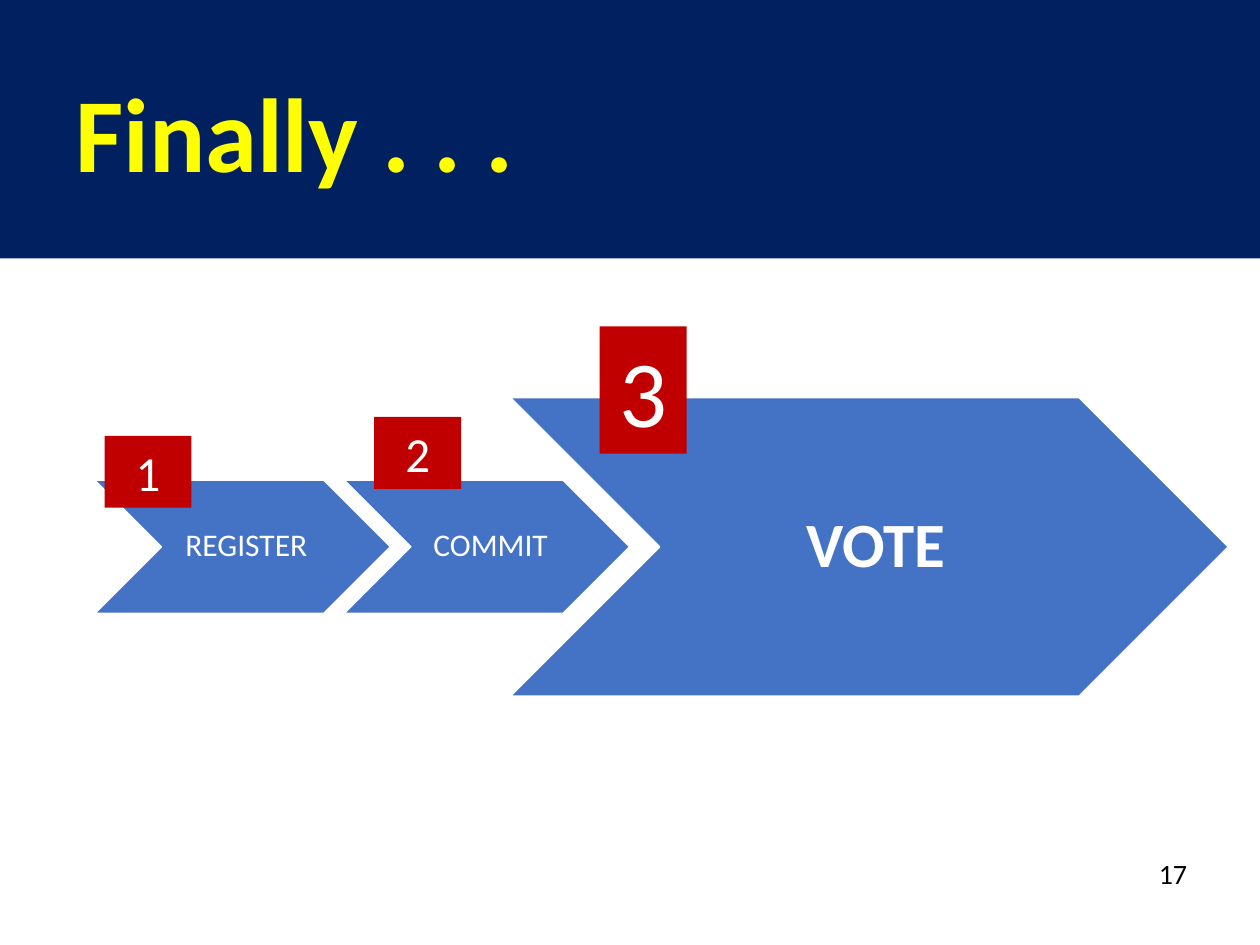
from dataclasses import dataclass
from pptx import Presentation
from pptx.dml.color import RGBColor
from pptx.enum import shapes, text
from pptx.util import Inches, Pt

HUES = {"navy": "002060", "gold": "FFFF00", "blue": "4472C4",
        "red": "C00000", "white": "FFFFFF", "black": "000000"}
FORM = shapes.MSO_SHAPE
ALIGN = text.PP_ALIGN
ANCHOR = text.MSO_ANCHOR
MID = 4.34


@dataclass
class Step:
    label: str
    left: float
    width: float
    height: float
    size: int
    pads: tuple[float, float, float]
    bold: bool = False


@dataclass
class Badge:
    digit: str
    left: float
    top: float
    height: float
    size: int


def hue(name: str) -> RGBColor:
    return RGBColor.from_string(HUES[name])


def write(shape, words: str, size: int, color: str, align=ALIGN.CENTER,
          anchor=ANCHOR.TOP, bold: bool = False):
    frame = shape.text_frame
    frame.word_wrap = True
    frame.vertical_anchor = anchor
    frame.text = words
    line = frame.paragraphs[0]
    line.alignment = align
    font = line.runs[0].font
    font.name, font.size, font.bold = "Calibri", Pt(size), bold
    font.color.rgb = hue(color)
    return line


def block(slide, form, left: float, top: float, width: float,
          height: float, fill: str):
    shape = slide.shapes.add_shape(
        form, Inches(left), Inches(top), Inches(width), Inches(height))
    shape.shadow.inherit = False
    shape.fill.solid()
    shape.fill.fore_color.rgb = hue(fill)
    shape.line.fill.background()
    return shape


def label(slide, left: float, top: float, width: float, height: float):
    return slide.shapes.add_textbox(
        Inches(left), Inches(top), Inches(width), Inches(height))


def draw_step(slide, step: Step) -> None:
    shape = block(slide, FORM.CHEVRON, step.left, MID - step.height / 2,
                  step.width, step.height, "blue")
    shape.line.color.rgb = hue("white")
    shape.line.width = Pt(1)
    line = write(shape, step.label, step.size, "white",
                 anchor=ANCHOR.MIDDLE, bold=step.bold)
    line.line_spacing = 0.9
    frame = shape.text_frame
    left, right, edge = map(Inches, step.pads)
    frame.margin_left, frame.margin_right = left, right
    frame.margin_top = frame.margin_bottom = edge
    frame.word_wrap = False


def draw_badge(slide, badge: Badge) -> None:
    shape = block(slide, FORM.RECTANGLE, badge.left, badge.top, 0.69,
                  badge.height, "red")
    write(shape, badge.digit, badge.size, "white")


STEPS = [
    Step("REGISTER", 0.75, 2.35, 1.06, 18, (0.17, 0.11, 0.03)),
    Step("VOTE", 4.05, 5.7, 2.37, 36, (0.15, 0.05, 0.05), True),
    Step("COMMIT", 2.73, 2.27, 1.06, 18, (0.08, 0.02, 0.03)),
]
BADGES = [
    Badge("1", 0.83, 3.46, 0.57, 28),
    Badge("3", 4.76, 2.59, 1.01, 54),
    Badge("2", 2.97, 3.31, 0.57, 28),
]


def main() -> None:
    deck = Presentation()
    deck.slide_width, deck.slide_height = Inches(10), Inches(7.5)
    slide = deck.slides.add_slide(deck.slide_layouts[6])
    block(slide, FORM.RECTANGLE, 0, 0, 10, 2.05, "navy")
    title = label(slide, 0.5, 0.37, 9.66, 1.45)
    line = write(title, "Finally . . .", 60, "gold", ALIGN.LEFT,
                 ANCHOR.MIDDLE, True)
    line.line_spacing = 0.9
    for step in STEPS:
        draw_step(slide, step)
    for badge in BADGES:
        draw_badge(slide, badge)
    write(label(slide, 7.48, 6.75, 2.04, 0.37), "17", 16, "black", ALIGN.RIGHT)
    deck.save("out.pptx")


if __name__ == "__main__":
    main()
